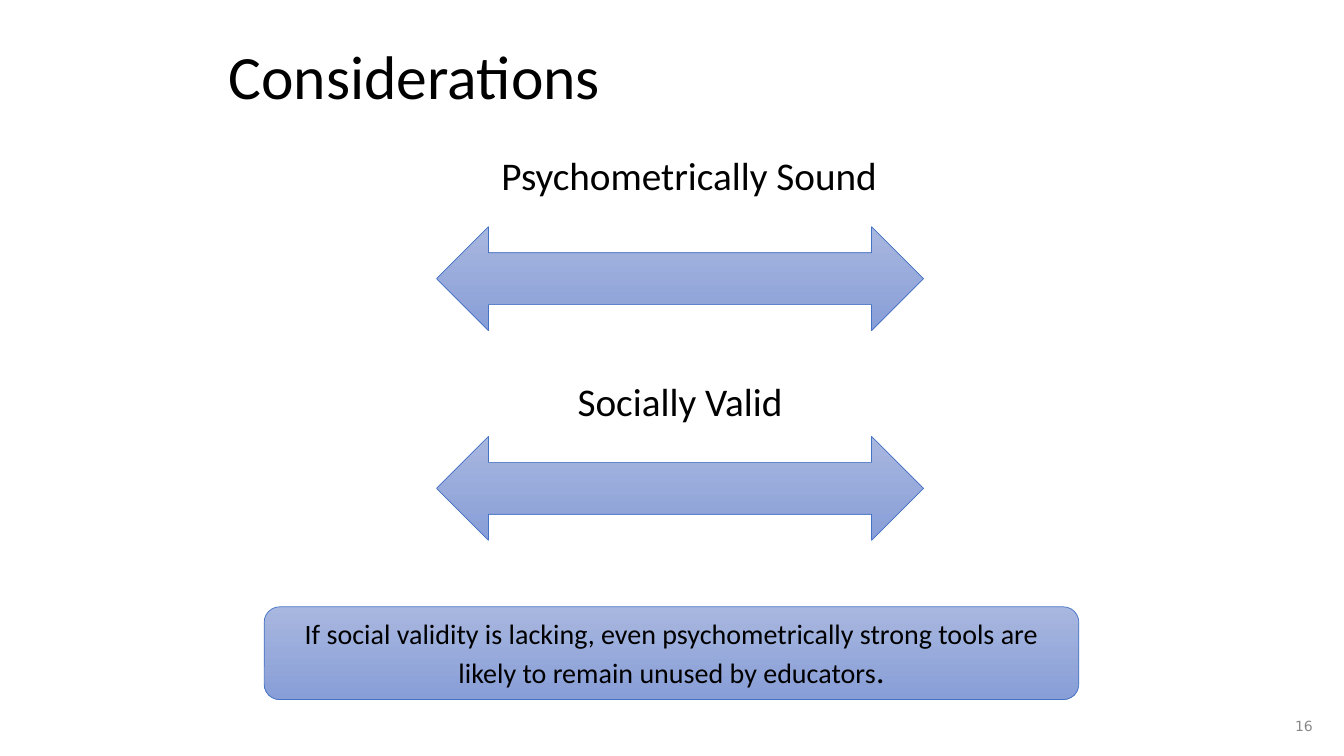
from pptx import Presentation
from pptx.dml.color import RGBColor
from pptx.enum.shapes import MSO_SHAPE
from pptx.enum.text import MSO_ANCHOR, PP_ALIGN
from pptx.util import Inches, Pt

ARROW = MSO_SHAPE.LEFT_RIGHT_ARROW
ROUNDED = MSO_SHAPE.ROUNDED_RECTANGLE
TOP, MIDDLE = MSO_ANCHOR.TOP, MSO_ANCHOR.MIDDLE
LEFT, CENTER, RIGHT = PP_ALIGN.LEFT, PP_ALIGN.CENTER, PP_ALIGN.RIGHT
BLANK_LAYOUT = 6
BLACK, GRAY, BLUE = "000000", "898989", "4472C4"
GRADIENT = ("A8B7DF", "889ED7")


def paint(color_format, value):
    """Set a colour from a hex string."""
    color_format.rgb = RGBColor.from_string(value)


def write(box, *spans, font="Calibri", color=BLACK, align=CENTER, anchor=TOP, spacing=1.0):
    """Fill a box with one paragraph of (text, size) spans."""
    frame = box.text_frame
    frame.word_wrap = True
    frame.vertical_anchor = anchor
    para = frame.paragraphs[0]
    para.alignment = align
    para.line_spacing = spacing
    for text, size in spans:
        span = para.add_run()
        span.text = text
        span.font.name = font
        span.font.size = Pt(size)
        paint(span.font.color, color)


def add_label(page, place, text, size, **style):
    """Add a text box holding one line of text."""
    box = page.shapes.add_textbox(*map(Inches, place))
    write(box, (text, size), **style)


def add_gradient_shape(page, kind, place):
    """Add a thinly outlined shape shaded from top to bottom."""
    shape = page.shapes.add_shape(kind, *map(Inches, place))
    shape.shadow.inherit = False
    shape.fill.gradient()
    shape.fill.gradient_angle = 270
    for stop, value in zip(shape.fill.gradient_stops, GRADIENT):
        paint(stop.color, value)
    paint(shape.line.color, BLUE)
    shape.line.width = Pt(0.5)
    return shape


def main():
    """Build the considerations slide."""
    deck = Presentation()
    deck.slide_width, deck.slide_height = Inches(13.33), Inches(7.5)
    page = deck.slides.add_slide(deck.slide_layouts[BLANK_LAYOUT])

    add_label(page, (7.56, 7, 5.56, 0.4), "16", 10,
              font="DejaVu Sans", color=GRAY, align=RIGHT, anchor=MIDDLE)
    add_label(page, (2.17, 0.25, 9, 1.08), "Considerations", 44,
              align=LEFT, anchor=MIDDLE, spacing=0.9)

    criteria = (
        ("Psychometrically Sound", (3.67, 1.5, 6.33, 0.7), 2.25),
        ("Socially Valid", (5.08, 3.75, 3.33, 0.8), 4.33),
    )
    for text, place, arrow_top in criteria:
        add_label(page, place, text, 28, spacing=0.9)
        add_gradient_shape(page, ARROW, (4.33, arrow_top, 4.83, 1.03))

    conclusion = add_gradient_shape(page, ROUNDED, (2.62, 6.02, 8.08, 0.92))
    write(conclusion,
          ("If social validity is lacking, even psychometrically strong tools are "
           "likely to remain unused by educators", 20),
          (".", 24), anchor=MIDDLE)
    deck.save("out.pptx")


if __name__ == "__main__":
    main()
